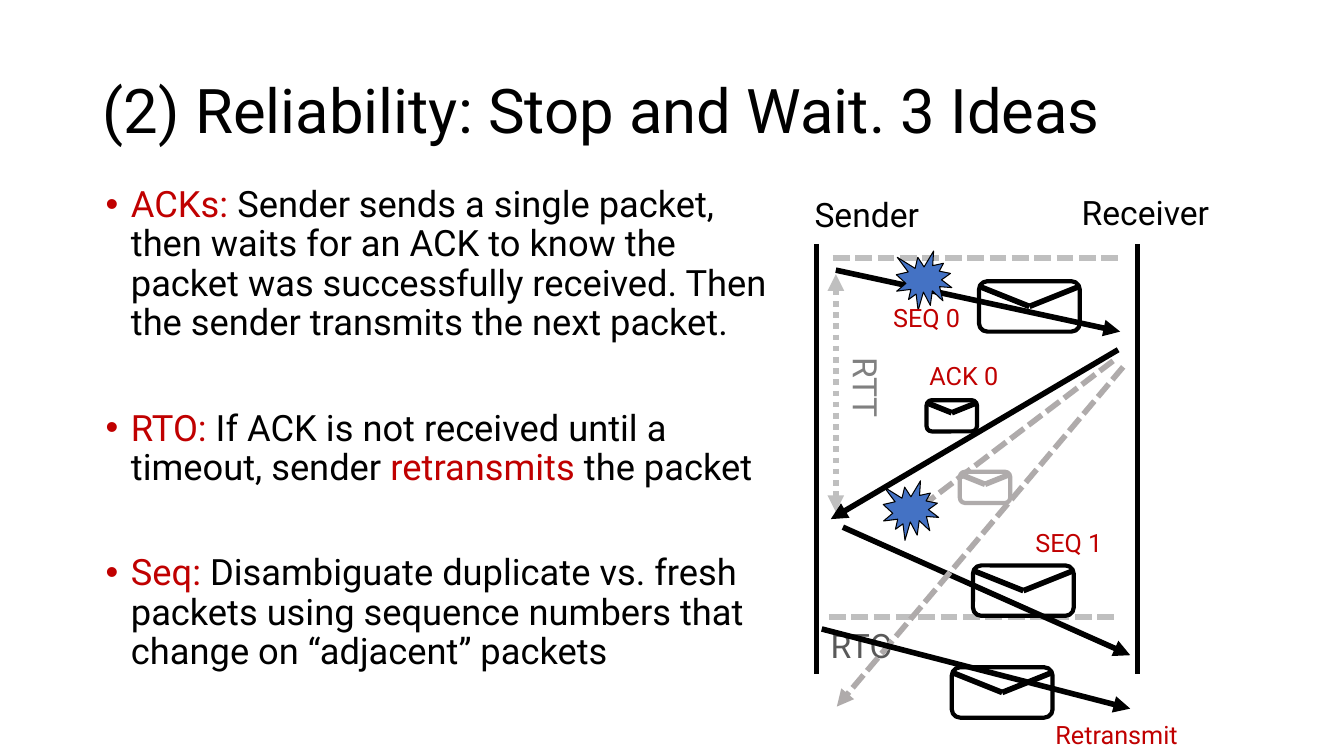
from dataclasses import dataclass

from lxml.etree import SubElement
from pptx import Presentation
from pptx.dml.color import RGBColor
from pptx.enum.dml import MSO_LINE
from pptx.enum.shapes import MSO_CONNECTOR, MSO_SHAPE
from pptx.enum.text import MSO_ANCHOR, MSO_AUTO_SIZE, PP_ALIGN
from pptx.oxml.ns import qn
from pptx.util import Inches, Pt


@dataclass(frozen=True)
class Theme:
    font: str = "Roboto"
    black: str = "000000"
    red: str = "C00000"
    blue: str = "4472C4"
    guide: str = "BFBFBF"
    lost: str = "AFABAB"
    rtt: str = "808080"
    rto: str = "595959"
    title_size: float = 44
    body_size: float = 25.9
    heading_size: float = 24
    label_size: float = 18
    line_width: float = 4
    envelope_width: float = 3
    burst_width: float = 0.75


THEME = Theme()

IDEAS = [
    [("ACKs:", THEME.red),
     (" Sender sends a single packet, then waits for an ACK to know the packet was "
      "successfully received. Then the sender transmits the next packet.", THEME.black)],
    [("RTO:", THEME.red),
     (" If ACK is not received until a timeout, sender ", THEME.black),
     ("retransmits", THEME.red), (" the packet", THEME.black)],
    [("Seq:", THEME.red),
     (" Disambiguate duplicate vs. fresh packets using sequence numbers that change on "
      "“adjacent” packets", THEME.black)],
]


def format_font(font, size, color):
    font.name = THEME.font
    font.size = Pt(size)
    font.color.rgb = RGBColor.from_string(color)


def format_line(line, color, width):
    line.color.rgb = RGBColor.from_string(color)
    line.width = Pt(width)


def add_title(slide, text):
    title = slide.shapes.title
    title.left, title.top = Inches(0.92), Inches(0.4)
    title.width, title.height = Inches(11.5), Inches(1.45)
    text_frame = title.text_frame
    text_frame.text = text
    text_frame.vertical_anchor = MSO_ANCHOR.MIDDLE
    text_frame.auto_size = MSO_AUTO_SIZE.NONE
    paragraph = text_frame.paragraphs[0]
    paragraph.alignment = PP_ALIGN.LEFT
    paragraph.line_spacing = 0.9
    format_font(paragraph.runs[0].font, THEME.title_size, THEME.black)


def add_bullet(paragraph, color):
    properties = paragraph._p.get_or_add_pPr()
    properties.set("marL", str(Inches(0.25)))
    properties.set("indent", str(Inches(-0.25)))
    bullet_color = SubElement(properties, qn("a:buClr"))
    SubElement(bullet_color, qn("a:srgbClr"), val=color)
    SubElement(properties, qn("a:buFont"), typeface="Arial")
    SubElement(properties, qn("a:buChar"), char="•")


def add_ideas(slide, ideas):
    box = slide.shapes.add_textbox(Inches(0.95), Inches(1.8), Inches(6.92), Inches(5.5))
    text_frame = box.text_frame
    text_frame.word_wrap = True
    for index, idea in enumerate(ideas):
        paragraph = text_frame.add_paragraph() if index else text_frame.paragraphs[0]
        add_bullet(paragraph, THEME.red)
        paragraph.line_spacing = 0.9
        paragraph.space_before = Pt(47.6 if index else 0)
        for text, color in idea:
            run = paragraph.add_run()
            run.text = text
            format_font(run.font, THEME.body_size, color)


def add_label(slide, text, left, top, width, size=THEME.label_size, color=THEME.red, rotation=0):
    height = 0.5 if size == THEME.heading_size else 0.4
    box = slide.shapes.add_textbox(Inches(left), Inches(top), Inches(width), Inches(height))
    box.rotation = rotation
    text_frame = box.text_frame
    text_frame.word_wrap = True
    text_frame.text = text
    format_font(text_frame.paragraphs[0].runs[0].font, size, color)


def add_line(shapes, start, end, color=THEME.black, dash=None, head=False, tail=False):
    """Draw a line, with arrowheads at its start (head) and end (tail) on request."""
    connector = shapes.add_connector(
        MSO_CONNECTOR.STRAIGHT, *(Inches(length) for length in (*start, *end)))
    line = connector.line
    format_line(line, color, THEME.line_width)
    if dash:
        line.dash_style = dash
    outline = line._get_or_add_ln()
    for wanted, tag in ((head, "a:headEnd"), (tail, "a:tailEnd")):
        if wanted:
            SubElement(outline, qn(tag), type="triangle")
    SubElement(connector._element.spPr, qn("a:effectLst"))


def add_envelope(slide, left, top, width, height, color=THEME.black):
    group = slide.shapes.add_group_shape()
    body = group.shapes.add_shape(MSO_SHAPE.ROUNDED_RECTANGLE, Inches(left), Inches(top),
                                  Inches(width), Inches(height))
    body.shadow.inherit = False
    body.fill.background()
    format_line(body.line, color, THEME.envelope_width)
    fold = (left + width / 2, top + width / 4)
    flap_top = top + width / 20
    add_line(group.shapes, (left, flap_top), fold, color)
    add_line(group.shapes, fold, (left + width, flap_top), color)


def add_loss_burst(slide, left, top):
    burst = slide.shapes.add_shape(MSO_SHAPE.EXPLOSION1, Inches(left), Inches(top),
                                   Inches(0.55), Inches(0.59))
    burst.shadow.inherit = False
    burst.fill.solid()
    burst.fill.fore_color.rgb = RGBColor.from_string(THEME.blue)
    format_line(burst.line, THEME.black, THEME.burst_width)


def add_timeline(slide):
    shapes = slide.shapes
    for x in (8.1, 11.28):
        add_line(shapes, (x, 2.42), (x, 6.69))
    add_label(slide, "Sender", 7.98, 1.87, 1.51, THEME.heading_size, THEME.black)
    add_label(slide, "Receiver", 10.63, 1.85, 1.68, THEME.heading_size, THEME.black)
    for left, y in ((8.22, 6.12), (8.26, 2.56)):
        add_line(shapes, (left, y), (left + 2.85, y), THEME.guide, MSO_LINE.SQUARE_DOT)
    add_line(shapes, (8.29, 2.72), (8.29, 5.08), THEME.guide, MSO_LINE.ROUND_DOT,
             head=True, tail=True)
    add_label(slide, "RTT", 8.04, 3.75, 1.1, THEME.heading_size, THEME.rtt, rotation=90)
    add_label(slide, "RTO", 8.14, 6.15, 1.1, THEME.heading_size, THEME.rto)


def add_messages(slide):
    shapes = slide.shapes
    for start, end in (((8.29, 2.68), (11.11, 3.29)), ((11.09, 3.47), (8.24, 5.15)),
                       ((8.36, 5.23), (11.21, 6.5))):
        add_line(shapes, start, end, tail=True)
    add_line(shapes, (11.14, 3.64), (8.3, 7.01), THEME.lost, MSO_LINE.SQUARE_DOT, tail=True)
    add_line(shapes, (8.15, 6.24), (11.21, 7.03), tail=True)
    add_line(shapes, (11.04, 3.58), (9.04, 5.1), THEME.lost, MSO_LINE.SQUARE_DOT, tail=True)
    for left, top in ((9.71, 2.79), (9.65, 5.61), (9.44, 6.62)):
        add_envelope(slide, left, top, 1, 0.5)
    add_envelope(slide, 9.19, 3.97, 0.5, 0.31)
    add_envelope(slide, 9.52, 4.68, 0.5, 0.31, THEME.lost)
    for left, top in ((8.76, 4.77), (8.89, 2.49)):
        add_loss_burst(slide, left, top)
    for text, left, top, width in (("SEQ 0", 8.76, 2.95, 1.08), ("ACK 0", 9.12, 3.53, 1.08),
                                   ("SEQ 1", 10.17, 5.18, 1.08),
                                   ("Retransmit", 10.37, 7.09, 2.53)):
        add_label(slide, text, left, top, width)


def main():
    presentation = Presentation()
    presentation.slide_width = Inches(13.33)
    presentation.slide_height = Inches(7.5)
    slide = presentation.slides.add_slide(presentation.slide_layouts.get_by_name("Title Only"))
    add_title(slide, "(2) Reliability: Stop and Wait. 3 Ideas")
    add_ideas(slide, IDEAS)
    add_timeline(slide)
    add_messages(slide)
    presentation.save("out.pptx")


if __name__ == "__main__":
    main()
